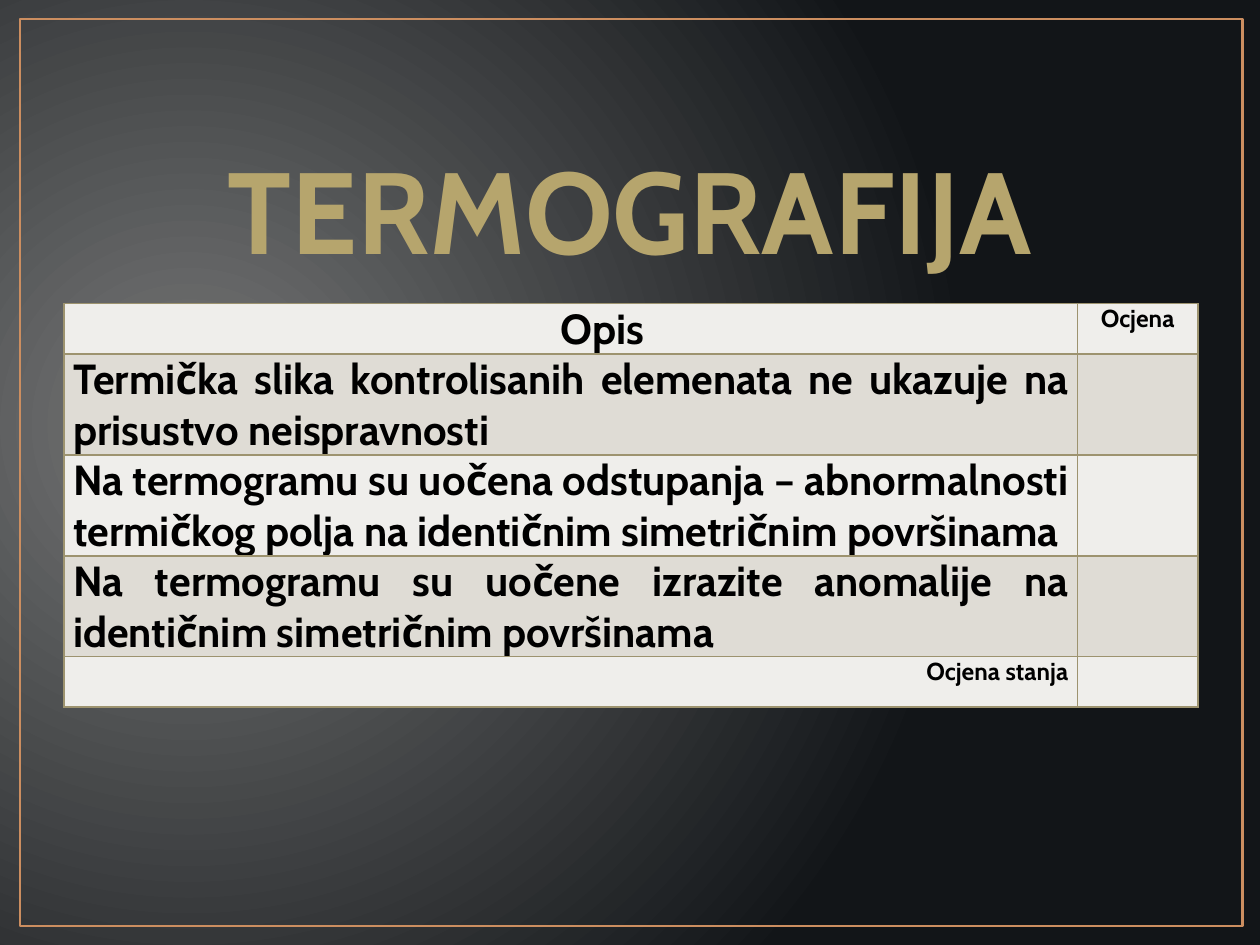
from lxml.etree import SubElement
from pptx import Presentation
from pptx.dml.color import RGBColor
from pptx.enum.shapes import MSO_SHAPE
from pptx.enum.text import MSO_ANCHOR, PP_ALIGN
from pptx.oxml import parse_xml
from pptx.oxml.ns import nsdecls, qn
from pptx.util import Inches, Pt

FONT = "Cabin"
TITLE = "TERMOGRAFIJA"
ROWS = [
    ("Opis", 24, PP_ALIGN.CENTER, "Ocjena"),
    ("Termička slika kontrolisanih elemenata ne ukazuje na prisustvo neispravnosti",
     24, PP_ALIGN.JUSTIFY, ""),
    ("Na termogramu su uočena odstupanja – abnormalnosti termičkog polja "
     "na identičnim simetričnim površinama", 24, PP_ALIGN.JUSTIFY, ""),
    ("Na termogramu su uočene izrazite anomalije na identičnim simetričnim površinama",
     24, PP_ALIGN.JUSTIFY, ""),
    ("Ocjena stanja", 14, PP_ALIGN.RIGHT, ""),
]
COLUMN_WIDTHS = (8.04, 0.96)
LINE_HEIGHT = 0.4
ROW_LINES = (1, 2, 2, 2, 1)
BANDS = ("EFEEEB", "DFDCD5")
BORDER = "9D936F"
BACKGROUND = ("767777", "121518")
FOCUS = {"l": 15, "t": 50, "r": 85, "b": 60}
CELL_FORMAT = {"margin_left": Inches(0.07), "margin_right": Inches(0.07),
               "margin_top": 0, "margin_bottom": 0}


def color(value):
    return RGBColor.from_string(value)


def write(paragraph, text, size, fill, alignment):
    paragraph.alignment = alignment
    run = paragraph.add_run()
    run.text = text
    for name, value in {"name": FONT, "size": Pt(size), "bold": True}.items():
        setattr(run.font, name, value)
    run.font.color.rgb = color(fill)


def paint_background(slide):
    fill = slide.background.fill
    fill.gradient()
    for stop, value in zip(fill.gradient_stops, BACKGROUND):
        stop.color.rgb = color(value)
    gradient = slide.element.find(".//" + qn("a:gradFill"))
    gradient.remove(gradient.find(qn("a:lin")))
    path = SubElement(gradient, qn("a:path"), {"path": "circle"})
    SubElement(path, qn("a:fillToRect"),
               {side: str(share * 1000) for side, share in FOCUS.items()})


def add_frame(slide):
    frame = slide.shapes.add_shape(MSO_SHAPE.RECTANGLE, Inches(0.16), Inches(0.15),
                                   Inches(9.7), Inches(7.2))
    frame.shadow.inherit = False
    frame.fill.background()
    frame.line.color.rgb = color("CC8E60")
    frame.line.width = Pt(1.5)


def add_title(slide):
    box = slide.shapes.add_textbox(Inches(0.5), Inches(1.15), Inches(9), Inches(1.1))
    box.text_frame.word_wrap = True
    box.text_frame.vertical_anchor = MSO_ANCHOR.BOTTOM
    write(box.text_frame.paragraphs[0], TITLE, 66, "B6A56D", PP_ALIGN.CENTER)


def style_cell(cell, band):
    for name, value in CELL_FORMAT.items():
        setattr(cell, name, value)
    cell.fill.solid()
    cell.fill.fore_color.rgb = color(band)
    properties = cell._tc.get_or_add_tcPr()
    for position, side in enumerate("LRTB"):
        properties.insert(position, parse_xml(
            f'<a:ln{side} {nsdecls("a")} w="{Pt(1)}"><a:solidFill>'
            f'<a:srgbClr val="{BORDER}"/></a:solidFill></a:ln{side}>'))


def add_ratings(slide):
    table = slide.shapes.add_table(
        len(ROWS), len(COLUMN_WIDTHS), Inches(0.51), Inches(2.41),
        Inches(sum(COLUMN_WIDTHS)), Inches(LINE_HEIGHT * sum(ROW_LINES))).table
    for column, width in zip(table.columns, COLUMN_WIDTHS):
        column.width = Inches(width)
    for index, (description, size, alignment, rating) in enumerate(ROWS):
        table.rows[index].height = Inches(LINE_HEIGHT * ROW_LINES[index])
        contents = ((description, size, alignment), (rating, 14, PP_ALIGN.CENTER))
        for column, (text, text_size, side) in enumerate(contents):
            cell = table.cell(index, column)
            style_cell(cell, BANDS[index % 2])
            if text:
                write(cell.text_frame.paragraphs[0], text, text_size, "000000", side)
    heading = table.cell(0, 0).text_frame.paragraphs[0]
    heading._p.get_or_add_pPr().set("indent", str(Inches(0.5)))


def main():
    """Build the thermography rating slide."""
    presentation = Presentation()
    presentation.slide_width, presentation.slide_height = Inches(10), Inches(7.5)
    slide = presentation.slides.add_slide(presentation.slide_layouts[6])
    paint_background(slide)
    add_frame(slide)
    add_title(slide)
    add_ratings(slide)
    presentation.save("out.pptx")


if __name__ == "__main__":
    main()
